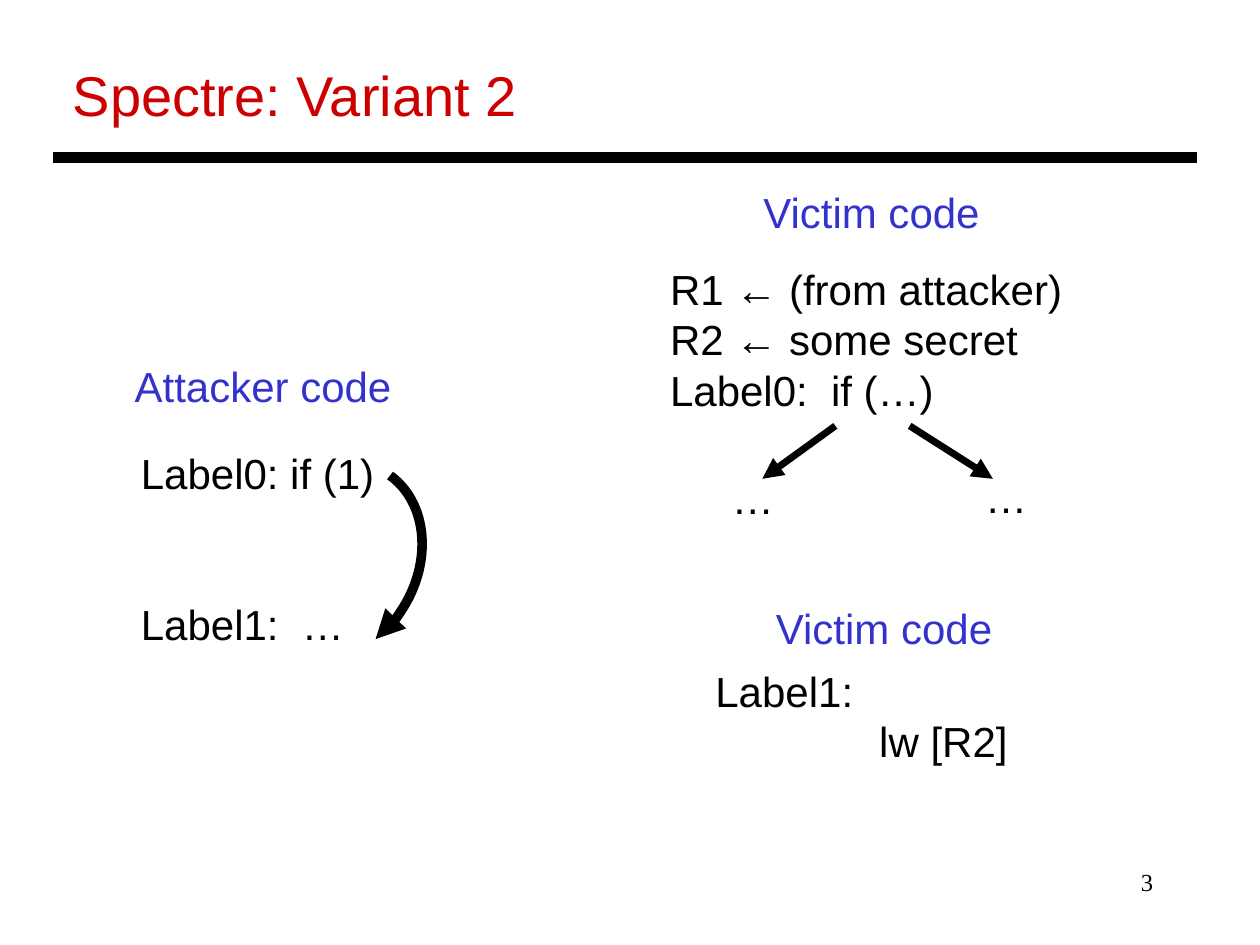
from dataclasses import dataclass

from lxml import etree
from pptx import Presentation
from pptx import util as u
from pptx.dml.color import RGBColor
from pptx.enum import shapes, text
from pptx.oxml.ns import qn

BLACK = RGBColor(0x00, 0x00, 0x00)
RED = RGBColor(0xCC, 0x00, 0x00)
BLUE = RGBColor(0x33, 0x33, 0xCC)

COLUMNS, ROWS = 100, 75
CELL = u.Inches(0.1)
LINE_RATIO = 1.2


@dataclass
class Label:
    col: float
    row: float
    cols: float
    rows: float
    lines: tuple[str, ...]
    color: RGBColor = BLACK
    size: int = 24
    font: str = "Arial"
    align: text.PP_ALIGN = text.PP_ALIGN.LEFT
    last_indent: float = 0  # columns
    last_gap: int = 0  # empty lines above the last paragraph


@dataclass
class Line:
    start: tuple[float, float]
    end: tuple[float, float]
    width: float
    arrow: bool = True


LABELS = [
    Label(71.7, 68.3, 20.8, 5, ("3",), size=14, font="Times New Roman",
          align=text.PP_ALIGN.RIGHT),
    Label(4.8, 4.3, 37.6, 6.4, ("Spectre: Variant 2",), RED, 32),
    Label(52.2, 20.4, 33.4, 13.1,
          ("R1 ← (from attacker)", "R2 ← some secret", "Label0:  if (…)")),
    Label(57.1, 37, 6.3, 5.1, ("…",)),
    Label(77.2, 36.9, 6.3, 5.1, ("…",)),
    Label(59.6, 14.3, 20.3, 5.1, ("Victim code",), BLUE),
    Label(60.6, 47.3, 20.3, 5.1, ("Victim code",), BLUE),
    Label(55.8, 52.3, 25.3, 9.1, ("Label1:", "lw [R2]"), last_indent=13),
    Label(9.7, 28.1, 23.5, 5.1, ("Attacker code",), BLUE),
    Label(10.2, 35, 20.7, 17.2, ("Label0: if (1)", "Label1:  …"), last_gap=2),
]

LINES = [
    Line((4.2, 12.5), (95, 12.5), 6, arrow=False),
    Line((66.3, 33.8), (60.5, 38), 4),
    Line((72.2, 33.8), (78.8, 38), 4),
]


def grid(*cells: float) -> list[u.Emu]:
    return [u.Emu(round(n * CELL)) for n in cells]


def add_label(s, label: Label) -> None:
    sp = s.shapes.add_textbox(*grid(label.col, label.row, label.cols, label.rows))
    tf = sp.text_frame
    tf.word_wrap = True
    tf.text = "\n".join(label.lines)
    line_height = label.size * LINE_RATIO
    for p in tf.paragraphs:
        p.alignment = label.align
        p.line_spacing = u.Pt(line_height)
        p.font.name = label.font
        p.font.size = u.Pt(label.size)
        p.font.color.rgb = label.color
    if label.last_gap:
        p.space_before = u.Pt(label.last_gap * line_height)
    if label.last_indent:
        p._p.get_or_add_pPr().set("marL", str(grid(label.last_indent)[0]))


def style_line(sp, width: float, arrow: bool) -> None:
    sp.line.color.rgb = BLACK
    sp.line.width = u.Pt(width)
    if arrow:
        etree.SubElement(sp.line._get_or_add_ln(), qn("a:tailEnd"), type="triangle")


def add_line(s, line: Line) -> None:
    sp = s.shapes.add_connector(shapes.MSO_CONNECTOR.STRAIGHT,
                                *grid(*line.start, *line.end))
    style_line(sp, line.width, line.arrow)
    etree.SubElement(sp._element.spPr, qn("a:effectLst"))


def add_jump_arc(s) -> None:
    """Curved arrow from the attacker's branch to its target."""
    sp = s.shapes.add_shape(shapes.MSO_SHAPE.ARC, *grid(19.2, 36.2, 13.8, 16.9))
    sp.adjustments[0] = 163.09
    sp.adjustments[1] = 15.18
    sp.rotation = 33.3
    sp.fill.background()
    style_line(sp, 5.5, arrow=True)
    sp.shadow.inherit = False


def main() -> None:
    prs = Presentation()
    prs.slide_width, prs.slide_height = grid(COLUMNS, ROWS)
    s = prs.slides.add_slide(prs.slide_layouts[6])
    for label in LABELS:
        add_label(s, label)
    for line in LINES:
        add_line(s, line)
    add_jump_arc(s)
    prs.save("out.pptx")


if __name__ == "__main__":
    main()
